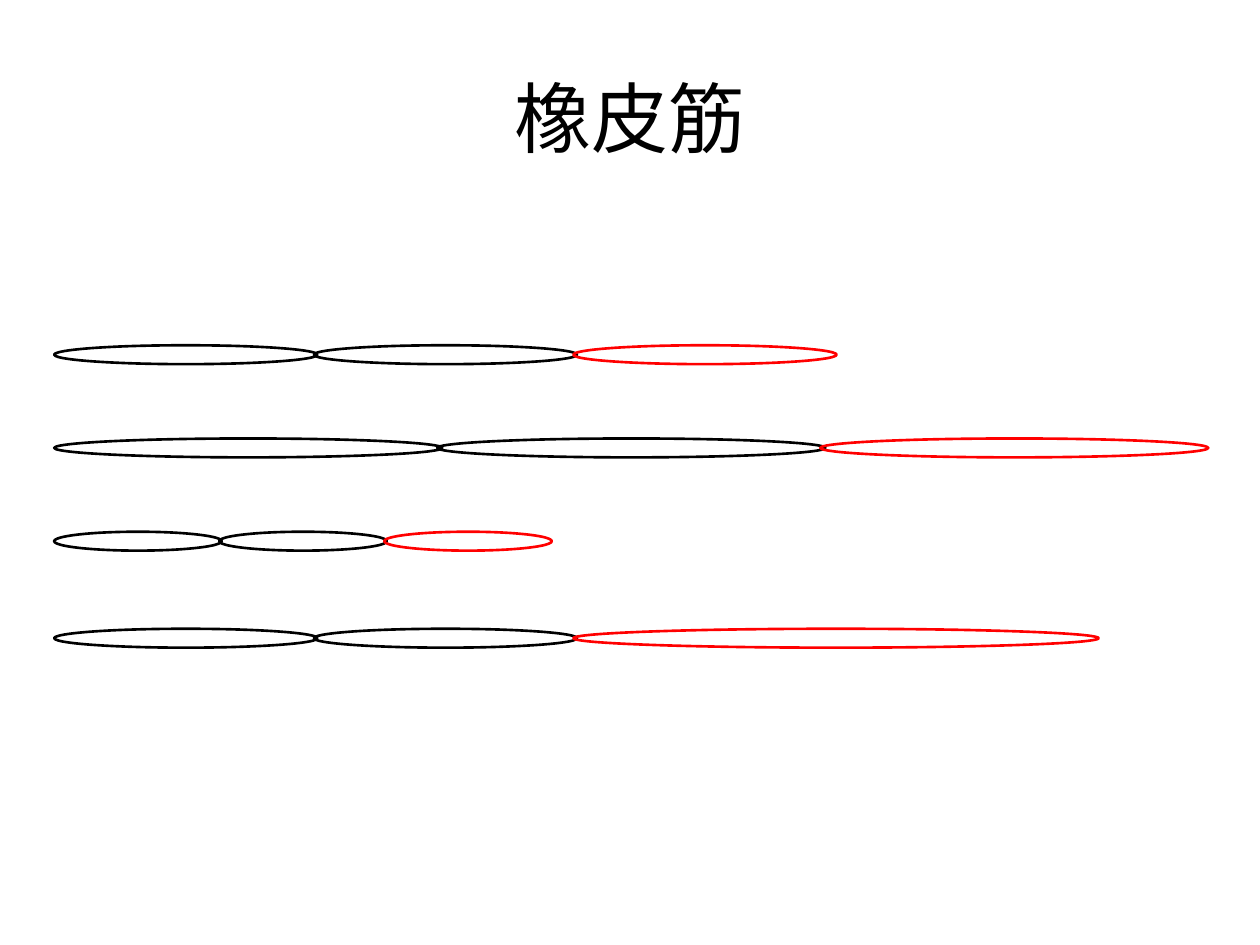
from pptx import Presentation
from pptx.dml.color import RGBColor
from pptx.enum.shapes import MSO_SHAPE
from pptx.enum.text import MSO_ANCHOR, PP_ALIGN
from pptx.oxml.ns import qn
from pptx.util import Inches, Pt
from lxml.etree import SubElement

COLORS = {"black": "000000", "red": "FF0000"}
FONT = "Noto Sans CJK SC"
LEFT = 0.43
BAND_HEIGHT = 0.15

# Top of each chain, step between bands, width of the black bands, width of the red band
CHAINS = [
    (2.74, 2.06, 2.09, 2.09),
    (3.48, 3.04, 3.08, 3.08),
    (4.22, 1.31, 1.33, 1.33),
    (4.99, 2.06, 2.09, 4.17),
]

presentation = Presentation()
presentation.slide_width = Inches(10)
presentation.slide_height = Inches(7.5)
slide = presentation.slides.add_slide(presentation.slide_layouts[5])

title = slide.shapes.title
title.left, title.top = Inches(0.5), Inches(0.3)
title.width, title.height = Inches(9), Inches(1.25)
title.text_frame.text = "橡皮筋"
title.text_frame.vertical_anchor = MSO_ANCHOR.MIDDLE
paragraph = title.text_frame.paragraphs[0]
paragraph.alignment = PP_ALIGN.CENTER
run = paragraph.runs[0]
run.font.size = Pt(44)
run.font.name = FONT
run.font.color.rgb = RGBColor.from_string(COLORS["black"])
SubElement(run.font._element, qn("a:ea"), typeface=FONT)

for top, step, black_width, red_width in CHAINS:
    chain = slide.shapes.add_group_shape()
    bands = [("black", black_width), ("black", black_width), ("red", red_width)]
    for index, (color, width) in enumerate(bands):
        band = chain.shapes.add_shape(
            MSO_SHAPE.OVAL,
            Inches(LEFT + index * step), Inches(top),
            Inches(width), Inches(BAND_HEIGHT),
        )
        band.shadow.inherit = False
        band.fill.background()
        band.line.color.rgb = RGBColor.from_string(COLORS[color])
        band.line.width = Pt(1.5)

presentation.save("out.pptx")
